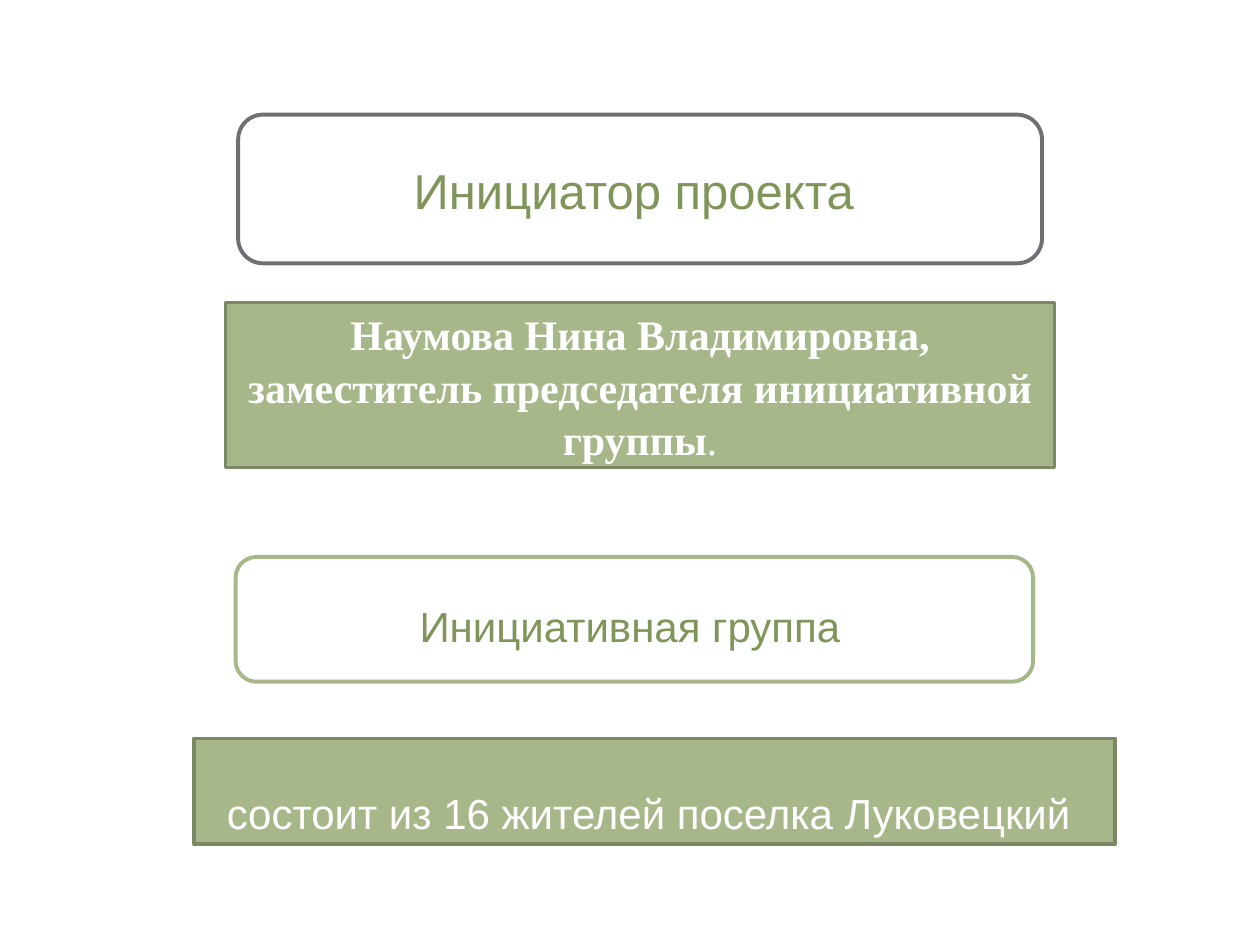
from dataclasses import dataclass

from pptx import Presentation
from pptx import util as u
from pptx.dml.color import RGBColor
from pptx.enum import shapes, text


@dataclass(frozen=True)
class Theme:
    white: str = "FFFFFF"
    paper: str = "FEFFFF"
    gray: str = "6F6F74"
    green: str = "A7B789"
    edge: str = "7C8765"
    heading: str = "81955B"
    sans: str = "Arial"
    serif: str = "Times New Roman"
    large: int = 28
    normal: int = 24


def write(frame, lines, *, font, size, color, bold=False, spacing=1.0,
          anchor=text.MSO_ANCHOR.MIDDLE):
    """Fill a frame with centred lines; each line is a list of (words, bold) or a string."""
    frame.word_wrap = True
    frame.auto_size = text.MSO_AUTO_SIZE.NONE
    frame.vertical_anchor = anchor
    for index, line in enumerate(lines):
        para = frame.paragraphs[0] if index == 0 else frame.add_paragraph()
        para.alignment = text.PP_ALIGN.CENTER
        para.line_spacing = spacing
        for words, heavy in [(line, bold)] if isinstance(line, str) else line:
            span = para.add_run()
            span.text = words
            span.font.name = font
            span.font.size = u.Pt(size)
            span.font.bold = heavy
            span.font.color.rgb = RGBColor.from_string(color)


class Composer:
    def __init__(self, slide, theme):
        self.slide = slide
        self.theme = theme

    def panel(self, kind, place, fill, line, width):
        box = self.slide.shapes.add_shape(kind, *map(u.Inches, place))
        box.shadow.inherit = False
        box.fill.solid()
        box.fill.fore_color.rgb = RGBColor.from_string(fill)
        box.line.color.rgb = RGBColor.from_string(line)
        box.line.width = u.Pt(width)
        return box

    def frame(self, place, line):
        return self.panel(shapes.MSO_SHAPE.ROUNDED_RECTANGLE, place,
                          self.theme.paper, line, 2.25)

    def card(self, place, lines, **style):
        box = self.panel(shapes.MSO_SHAPE.RECTANGLE, place,
                         self.theme.green, self.theme.edge, 2)
        write(box.text_frame, lines, size=self.theme.normal, **style)
        return box

    def title(self, place, words):
        box = self.slide.shapes.title
        box.left, box.top, box.width, box.height = map(u.Inches, place)
        write(box.text_frame, [words], font=self.theme.sans,
              size=self.theme.large, color=self.theme.heading)
        # Bring the title in front of its frame
        box.element.getparent().append(box.element)

    def label(self, place, words):
        box = self.slide.shapes.add_textbox(*map(u.Inches, place))
        write(box.text_frame, [words], font=self.theme.sans, size=self.theme.normal,
              color=self.theme.heading, spacing=1.2, anchor=text.MSO_ANCHOR.TOP)


def main():
    deck = Presentation()
    deck.slide_width, deck.slide_height = u.Inches(10), u.Inches(7.5)
    theme = Theme()
    page = Composer(deck.slides.add_slide(deck.slide_layouts[5]), theme)

    # Heading frames
    page.frame((1.89, 0.91, 6.38, 1.18), theme.gray)
    page.frame((1.87, 4.42, 6.33, 0.99), theme.green)

    # Initiator
    page.card((1.79, 2.4, 6.58, 1.31),
              ["Наумова Нина Владимировна,",
               [("заместитель председателя инициативной группы", True), (".", False)]],
              font=theme.serif, color=theme.paper, bold=True, spacing=1.05)

    # Group members
    members = page.card((1.54, 5.86, 7.31, 0.84),
                        ["состоит из 16 жителей поселка Луковецкий"],
                        font=theme.sans, color=theme.white,
                        anchor=text.MSO_ANCHOR.BOTTOM)
    members.text_frame.margin_right = u.Inches(0.19)

    # Headings
    page.title((2.28, 1.22, 5.5, 0.57), "Инициатор проекта")
    page.label((2.25, 4.64, 5.5, 0.55), "Инициативная группа")

    deck.save("out.pptx")


if __name__ == "__main__":
    main()
